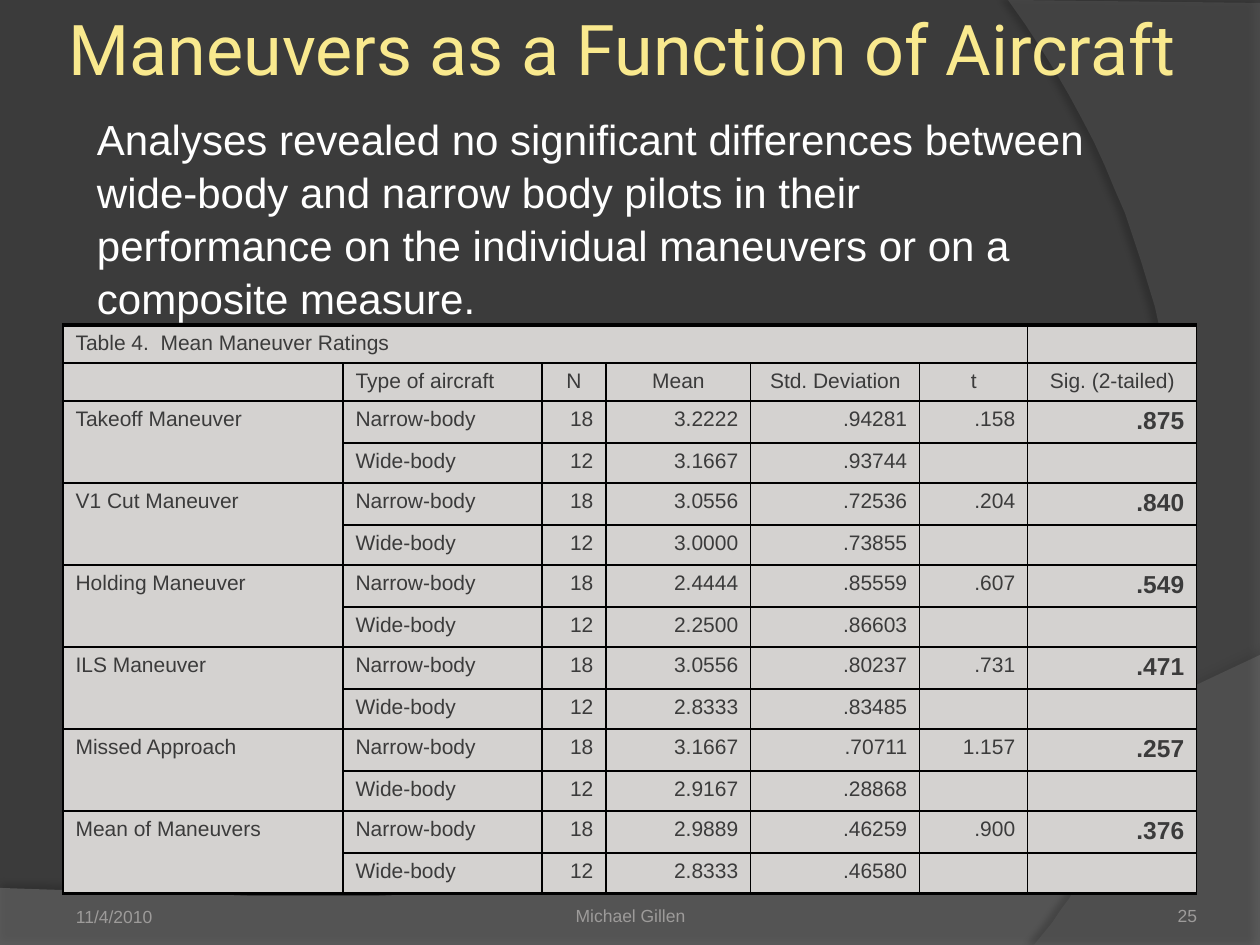
from dataclasses import dataclass

from lxml.etree import SubElement
from pptx import Presentation
from pptx.dml.color import RGBColor
from pptx.enum.text import MSO_ANCHOR, PP_ALIGN
from pptx.oxml.ns import qn
from pptx.util import Emu, Pt

PX = 914400 // 126
LEFT, MID, RIGHT = PP_ALIGN.LEFT, PP_ALIGN.CENTER, PP_ALIGN.RIGHT


@dataclass(frozen=True)
class Theme:
    back: str = "3B3B3B"
    title: str = "F9E98E"
    body: str = "FFFFFF"
    foot: str = "9D9B9A"
    cell: str = "D4D2D0"
    ink: str = "3B3B3B"
    rule: str = "000000"
    head: str = "Roboto"
    text: str = "Arial"
    big: int = 40
    mid: int = 24
    bold: int = 14
    small: int = 12
    tiny: int = 10


@dataclass(frozen=True)
class Label:
    text: str
    box: tuple[int, int, int, int]
    pads: tuple[int, int, int, int]
    size: int
    color: str
    font: str = Theme.text
    align: PP_ALIGN = LEFT
    anchor: MSO_ANCHOR = MSO_ANCHOR.BOTTOM
    before: int = 0
    pitch: float = 1.0


@dataclass(frozen=True)
class Swoosh:
    """A filled outline: straight corners, then one cubic curve to its end."""
    edge: tuple
    curve: tuple
    color: str
    alpha: int
    dark: int
    dist: float
    turn: int


@dataclass(frozen=True)
class Rating:
    name: str
    narrow: tuple[str, str]
    wide: tuple[str, str]
    t: str
    sig: str


T = Theme()
SWOOSHES = (
    Swoosh(((0, 888), (0, 945), (1260, 945), (1260, 655)),
           ((704, 919), (493, 906), (0, 888)), "7F7F7F", 45, 35, 3.5, 270),
    Swoosh(((1260, 3), (1260, 945), (1034, 945)),
           ((1178, 780), (1283, 378), (1008, 0)), "5E5E5E", 40, 45, 4, 180),
)
TITLE = Label("Maneuvers as a Function of Aircraft", (63, -31, 1134, 158),
              (6, 6, 6, 6), T.big, T.title, T.head, anchor=MSO_ANCHOR.MIDDLE)
LABELS = (
    Label("11/4/2010", (63, 862, 294, 65), (13, 6, 13, 0), T.tiny, T.foot),
    Label("25", (903, 861, 294, 65), (0, 0, 0, 0), T.tiny, T.foot,
          align=RIGHT),
    Label("Michael Gillen", (431, 861, 399, 65), (0, 6, 0, 0), T.tiny, T.foot,
          align=MID),
    Label("Analyses revealed no significant differences between wide-body "
          "and narrow body pilots in their performance on the individual "
          "maneuvers or on a composite measure.",
          (84, 105, 1018, 217), (13, 6, 13, 6), T.mid, T.body,
          anchor=MSO_ANCHOR.TOP, before=12, pitch=1.05),
)
CAPTION = "Table 4.  Mean Maneuver Ratings"
HEADS = ("", "Type of aircraft", "N", "Mean", "Std. Deviation", "t",
         "Sig. (2-tailed)")
RATINGS = (
    Rating("Takeoff Maneuver", ("3.2222", ".94281"), ("3.1667", ".93744"),
           ".158", ".875"),
    Rating("V1 Cut Maneuver", ("3.0556", ".72536"), ("3.0000", ".73855"),
           ".204", ".840"),
    Rating("Holding Maneuver", ("2.4444", ".85559"), ("2.2500", ".86603"),
           ".607", ".549"),
    Rating("ILS Maneuver", ("3.0556", ".80237"), ("2.8333", ".83485"),
           ".731", ".471"),
    Rating("Missed Approach", ("3.1667", ".70711"), ("2.9167", ".28868"),
           "1.157", ".257"),
    Rating("Mean of Maneuvers", ("2.9889", ".46259"), ("2.8333", ".46580"),
           ".900", ".376"),
)
WIDTHS = (280, 199, 64, 145, 169, 108, 169)
HIGHS = (38, 36) + (40,) * (2 * len(RATINGS))
ORIGIN = (63, 325)


def px(num: float) -> Emu:
    return Emu(round(num * PX))


def rgb(color: str) -> RGBColor:
    return RGBColor.from_string(color)


def ink(para, size: int, color: str, font: str = T.text, bold=False) -> None:
    para.font.size, para.font.name, para.font.bold = Pt(size), font, bold
    para.font.color.rgb = rgb(color)


def tint(node, color: str, alpha: int) -> None:
    clr = SubElement(node, qn("a:srgbClr"), val=color)
    SubElement(clr, qn("a:alpha"), val=str(alpha * 1000))


def bend(start: tuple, curve: tuple, steps: int = 48) -> list:
    """Points along a cubic curve, without its start."""
    knots = (start, *curve)
    spots = []
    for step in range(1, steps + 1):
        u = step / steps
        v = 1 - u
        parts = (v ** 3, 3 * v * v * u, 3 * v * u * u, u ** 3)
        spots.append(tuple(sum(w * k[axis] for w, k in zip(parts, knots))
                           for axis in (0, 1)))
    return spots


def draw_swoosh(slide, item: Swoosh) -> None:
    first, *rest = item.edge
    pen = slide.shapes.build_freeform(*first, scale=PX)
    pen.add_line_segments(rest + bend(item.edge[-1], item.curve))
    shape = pen.convert_to_shape()
    shape.line.fill.background()
    shape.fill.solid()
    shape.fill.fore_color.rgb = rgb(item.color)
    props = shape.fill._xPr
    clr = props.find(qn("a:solidFill"))[0]
    SubElement(clr, qn("a:alpha"), val=str(item.alpha * 1000))
    shape.shadow.inherit = False
    glow = SubElement(props.find(qn("a:effectLst")), qn("a:outerShdw"),
                      blurRad=str(Pt(4)), dist=str(Pt(item.dist)),
                      dir=str(item.turn * 60000), algn="ctr", rotWithShape="0")
    tint(glow, T.rule, item.dark)


def draw_label(slide, item: Label) -> None:
    frame = slide.shapes.add_textbox(*map(px, item.box)).text_frame
    frame.word_wrap = True
    frame.vertical_anchor = item.anchor
    (frame.margin_left, frame.margin_top,
     frame.margin_right, frame.margin_bottom) = map(px, item.pads)
    para = frame.paragraphs[0]
    para.text, para.alignment = item.text, item.align
    para.space_before, para.line_spacing = Pt(item.before), item.pitch
    ink(para, item.size, item.color, item.font)


def rule(cell, top: float, foot: float) -> None:
    """Draw the four borders, ahead of the fill as the schema asks."""
    props = cell._tc.get_or_add_tcPr()
    sides = (("L", 0.75), ("R", 0.75), ("T", top), ("B", foot))
    for spot, (side, wide) in enumerate(sides):
        line = SubElement(props, qn(f"a:ln{side}"), w=str(Pt(wide)))
        tint(SubElement(line, qn("a:solidFill")), T.rule, 100)
        props.insert(spot, line)


def fill_cell(cell, text: str, align: PP_ALIGN, bold: bool) -> None:
    cell.fill.solid()
    cell.fill.fore_color.rgb = rgb(T.cell)
    para = cell.text_frame.paragraphs[0]
    size = T.bold if bold else T.small
    para.alignment = align
    ink(para, size, T.ink, bold=bold)
    if text:
        para.text = text
        props = para._p.get_or_add_pPr()
        props.set("marL", str(px(48)))
        props.set("indent", str(-px(48)))
    else:
        SubElement(para._p, qn("a:endParaRPr"), sz=str(size * 100))


def grid() -> list:
    rows = [(CAPTION,) + ("",) * 6, HEADS]
    for item in RATINGS:
        rows.append((item.name, "Narrow-body", "18", *item.narrow,
                     item.t, item.sig))
        rows.append(("", "Wide-body", "12", *item.wide, "", ""))
    return rows


def draw_table(slide) -> None:
    rows = grid()
    last = len(rows) - 1
    table = slide.shapes.add_table(
        len(rows), len(WIDTHS), *map(px, ORIGIN),
        px(sum(WIDTHS)), px(sum(HIGHS))).table
    table.first_row = table.horz_banding = False
    for col, wide in zip(table.columns, WIDTHS):
        col.width = px(wide)
    for row, high in zip(table.rows, HIGHS):
        row.height = px(high)
    for r, texts in enumerate(rows):
        for c, text in enumerate(texts):
            align = LEFT if r == 0 or c < 2 else MID if r == 1 else RIGHT
            cell = table.cell(r, c)
            fill_cell(cell, text, align, r > 1 and c == 6 and bool(text))
            end = r == last or (r == last - 1 and c == 0)
            rule(cell, 2 if r == 0 else 1, 2 if end else 1)
    table.cell(0, 0).merge(table.cell(0, 5))
    for r in range(2, last, 2):
        table.cell(r, 0).merge(table.cell(r + 1, 0))


def main() -> None:
    deck = Presentation()
    deck.slide_width, deck.slide_height = px(1260), px(945)
    slide = deck.slides.add_slide(deck.slide_layouts[6])
    slide.background.fill.solid()
    slide.background.fill.fore_color.rgb = rgb(T.back)
    for item in SWOOSHES:
        draw_swoosh(slide, item)
    draw_label(slide, TITLE)
    draw_table(slide)
    for item in LABELS:
        draw_label(slide, item)
    deck.save("out.pptx")


if __name__ == "__main__":
    main()
